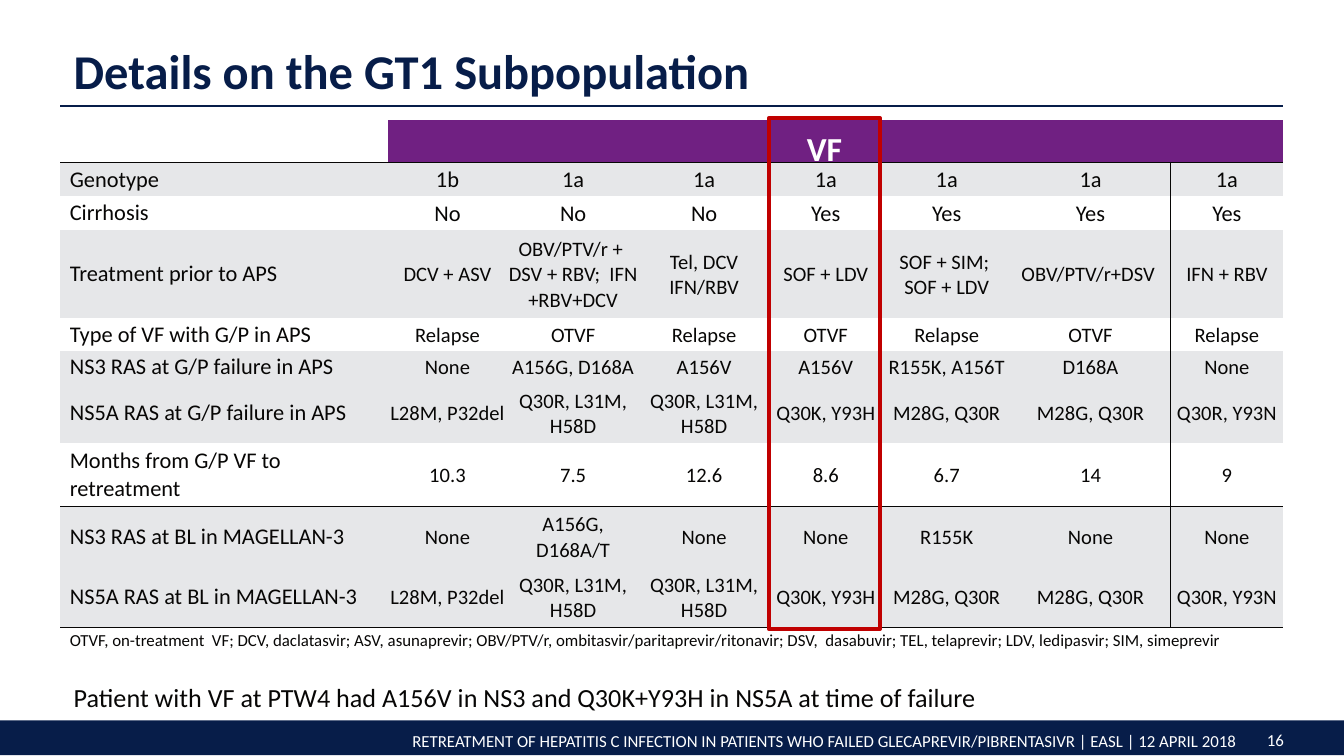
from lxml import etree
from pptx import Presentation
from pptx.dml.color import RGBColor
from pptx.enum.shapes import MSO_CONNECTOR, MSO_SHAPE
from pptx.enum.text import MSO_ANCHOR, PP_ALIGN
from pptx.oxml.ns import qn
from pptx.util import Inches, Pt

RECTANGLE = MSO_SHAPE.RECTANGLE
STRAIGHT = MSO_CONNECTOR.STRAIGHT
LEFT, CENTER, RIGHT = PP_ALIGN.LEFT, PP_ALIGN.CENTER, PP_ALIGN.RIGHT
TOP, MIDDLE, BOTTOM = MSO_ANCHOR.TOP, MSO_ANCHOR.MIDDLE, MSO_ANCHOR.BOTTOM

FONT = "Calibri"
NAVY, INK, WHITE = "071D49", "070605", "FFFFFF"
PURPLE, GREY, RED = "702082", "E6E7E9", "C00000"
PLAIN_GRID = "{2D5ABB26-0587-4C30-8999-92F81FD0307C}"

COLUMN_WIDTHS = [2.44, 0.88, 0.99, 0.96, 0.85, 0.95, 1.19, 0.84]
ROW_HEIGHTS = [0.32, 0.25, 0.25, 0.66, 0.24, 0.24, 0.45, 0.47, 0.45, 0.45, 0.2]
PATIENT_ROWS = [
    ["Genotype", "1b", "1a", "1a", "1a", "1a", "1a", "1a"],
    ["Cirrhosis", "No", "No", "No", "Yes", "Yes", "Yes", "Yes"],
    ["Treatment prior to APS", "DCV + ASV", "OBV/PTV/r +  DSV + RBV;  IFN +RBV+DCV",
     "Tel, DCV\nIFN/RBV", "SOF + LDV", "SOF + SIM; \nSOF + LDV",
     "OBV/PTV/r+DSV ", "IFN + RBV"],
    ["Type of VF with G/P in APS", "Relapse", "OTVF", "Relapse", "OTVF",
     "Relapse", "OTVF", "Relapse"],
    ["NS3 RAS at G/P failure in APS", "None", "A156G, D168A", "A156V", "A156V",
     "R155K, A156T", "D168A", "None"],
    ["NS5A RAS at G/P failure in APS", "L28M, P32del", "Q30R, L31M, H58D",
     "Q30R, L31M, H58D", "Q30K, Y93H", "M28G, Q30R", "M28G, Q30R", "Q30R, Y93N"],
    ["Months from G/P VF to retreatment", "10.3", "7.5", "12.6", "8.6", "6.7", "14", "9"],
    ["NS3 RAS at BL in MAGELLAN-3", "None", "A156G, D168A/T", "None", "None",
     "R155K", "None", "None"],
    ["NS5A RAS at BL in MAGELLAN-3", "L28M, P32del", "Q30R, L31M, H58D",
     "Q30R, L31M, H58D", "Q30K, Y93H", "M28G, Q30R", "M28G, Q30R", "Q30R, Y93N"],
]
ABBREVIATIONS = (
    "OTVF, on-treatment  VF; DCV, daclatasvir; ASV, asunaprevir; OBV/PTV/r, "
    "ombitasvir/paritaprevir/ritonavir; DSV,  dasabuvir; TEL, telaprevir; "
    "LDV, ledipasvir; SIM, simeprevir"
)
FOOTER = (
    "RETREATMENT OF HEPATITIS C INFECTION IN PATIENTS WHO FAILED "
    "GLECAPREVIR/PIBRENTASIVR | EASL | 12 APRIL 2018"
)
SHADED_ROWS = {1, 3, 5, 6, 8, 9}
RULED_ROWS = {0, 7, 9}
LAST_ROW = len(ROW_HEIGHTS) - 1
DIVIDED_COLUMN = 6


def color(hex_string):
    return RGBColor.from_string(hex_string)


def write(frame, text, size, hue, align=LEFT, bold=False, spacing=None):
    paragraph = frame.paragraphs[0]
    paragraph.alignment = align
    if spacing:
        paragraph.line_spacing = spacing
    for index, line in enumerate(text.split("\n")):
        if index:
            paragraph.add_line_break()
        run = paragraph.add_run()
        run.text = line
        run.font.name = FONT
        run.font.size = Pt(size)
        run.font.bold = bold
        run.font.color.rgb = color(hue)


def add_text(slide, box, text, size, hue, anchor=TOP, **style):
    frame = slide.shapes.add_textbox(*map(Inches, box)).text_frame
    frame.word_wrap = True
    frame.vertical_anchor = anchor
    write(frame, text, size, hue, **style)


def add_rectangle(slide, box, fill=None, line=None, width=0):
    rectangle = slide.shapes.add_shape(RECTANGLE, *map(Inches, box))
    rectangle.shadow.inherit = False
    if fill:
        rectangle.fill.solid()
        rectangle.fill.fore_color.rgb = color(fill)
    else:
        rectangle.fill.background()
    if line:
        rectangle.line.color.rgb = color(line)
        rectangle.line.width = Pt(width)
    else:
        rectangle.line.fill.background()


def add_footer(slide, box):
    left, top, width, height = box
    add_rectangle(slide, box, fill=NAVY)
    add_text(slide, (left - 0.35, top + 0.03, width - 0.36, 0.25), FOOTER, 9, WHITE, align=RIGHT)
    add_text(slide, (left + width - 0.7, top + 0.04, 0.38, 0.24), "16", 9, WHITE,
             align=CENTER, spacing=0.9)


def add_title(slide, box):
    left, top, width, height = box
    base = top + height
    rule = slide.shapes.add_connector(
        STRAIGHT, *map(Inches, (left, base, left + width, base)))
    rule.line.color.rgb = color(NAVY)
    rule.line.width = Pt(0.75)
    etree.SubElement(rule._element.spPr, qn("a:effectLst"))
    add_text(slide, box, "Details on the GT1 Subpopulation", 26, NAVY, anchor=BOTTOM,
             bold=True, spacing=0.9)


def add_borders(cell, row, column):
    in_body = 0 < row < LAST_ROW
    sides = {
        "L": in_body and column == DIVIDED_COLUMN + 1,
        "R": in_body and column == DIVIDED_COLUMN,
        "T": row - 1 in RULED_ROWS,
        "B": row in RULED_ROWS,
    }
    properties = cell._tc.get_or_add_tcPr()
    for side, ruled in sides.items():
        border = etree.SubElement(properties, qn(f"a:ln{side}"), w=str(Pt(1)))
        if ruled:
            solid = etree.SubElement(border, qn("a:solidFill"))
            etree.SubElement(solid, qn("a:srgbClr"), val=INK)
        else:
            etree.SubElement(border, qn("a:noFill"))


def format_cell(cell, row, column):
    side, above = (0.01, 0.01) if column else (0.07, 0)
    cell.margin_left = cell.margin_right = Inches(side)
    cell.margin_top, cell.margin_bottom = Inches(above), 0
    cell.vertical_anchor = MIDDLE
    add_borders(cell, row, column)
    if row == LAST_ROW:
        cell.fill.background()
        return
    cell.fill.solid()
    if row == 0 and column:
        fill = PURPLE
    else:
        fill = GREY if row in SHADED_ROWS else WHITE
    cell.fill.fore_color.rgb = color(fill)


def add_patient_table(slide, box):
    left, top, width, height = box
    frame = slide.shapes.add_table(
        len(ROW_HEIGHTS), len(COLUMN_WIDTHS), *map(Inches, box))
    table = frame.table
    table.first_row = table.horz_banding = False
    table._tbl.tblPr.find(qn("a:tableStyleId")).text = PLAIN_GRID
    for column, column_width in zip(table.columns, COLUMN_WIDTHS):
        column.width = Inches(column_width)
    for row, row_height in zip(table.rows, ROW_HEIGHTS):
        row.height = Inches(row_height)
    for row in range(len(ROW_HEIGHTS)):
        for column in range(len(COLUMN_WIDTHS)):
            format_cell(table.cell(row, column), row, column)
    table.cell(0, 1).merge(table.cell(0, 7))
    table.cell(LAST_ROW, 0).merge(table.cell(LAST_ROW, 7))
    for row, entries in enumerate(PATIENT_ROWS, start=1):
        for column, entry in enumerate(entries):
            size = 12 if column == 0 or row <= 2 else 11
            write(table.cell(row, column).text_frame, entry, size, INK,
                  align=CENTER if column else LEFT)
    write(table.cell(LAST_ROW, 0).text_frame, ABBREVIATIONS, 9, INK)


def add_failure_highlight(slide, box):
    left, top, width, height = box
    add_rectangle(slide, box, line=RED, width=2)
    add_text(slide, (left, top + 0.02, width, 0.4), "VF", 18, WHITE, align=CENTER, bold=True)


def add_finding(slide, box):
    add_text(slide, box,
             "Patient with VF at PTW4 had A156V in NS3 and Q30K+Y93H in NS5A at time of failure",
             14, INK)


def main():
    deck = Presentation()
    deck.slide_width = Inches(10)
    deck.slide_height = deck.slide_width * 9 // 16
    slide = deck.slides.add_slide(deck.slide_layouts[6])
    add_footer(slide, (0, 5.36, 10, 0.26))
    add_title(slide, (0.45, 0.21, 9.1, 0.58))
    add_patient_table(slide, (0.45, 0.89, 9.1, 3.97))
    add_failure_highlight(slide, (5.72, 0.88, 0.83, 3.8))
    add_finding(slide, (0.45, 5.02, 9.1, 0.6))
    deck.save("out.pptx")


if __name__ == "__main__":
    main()
